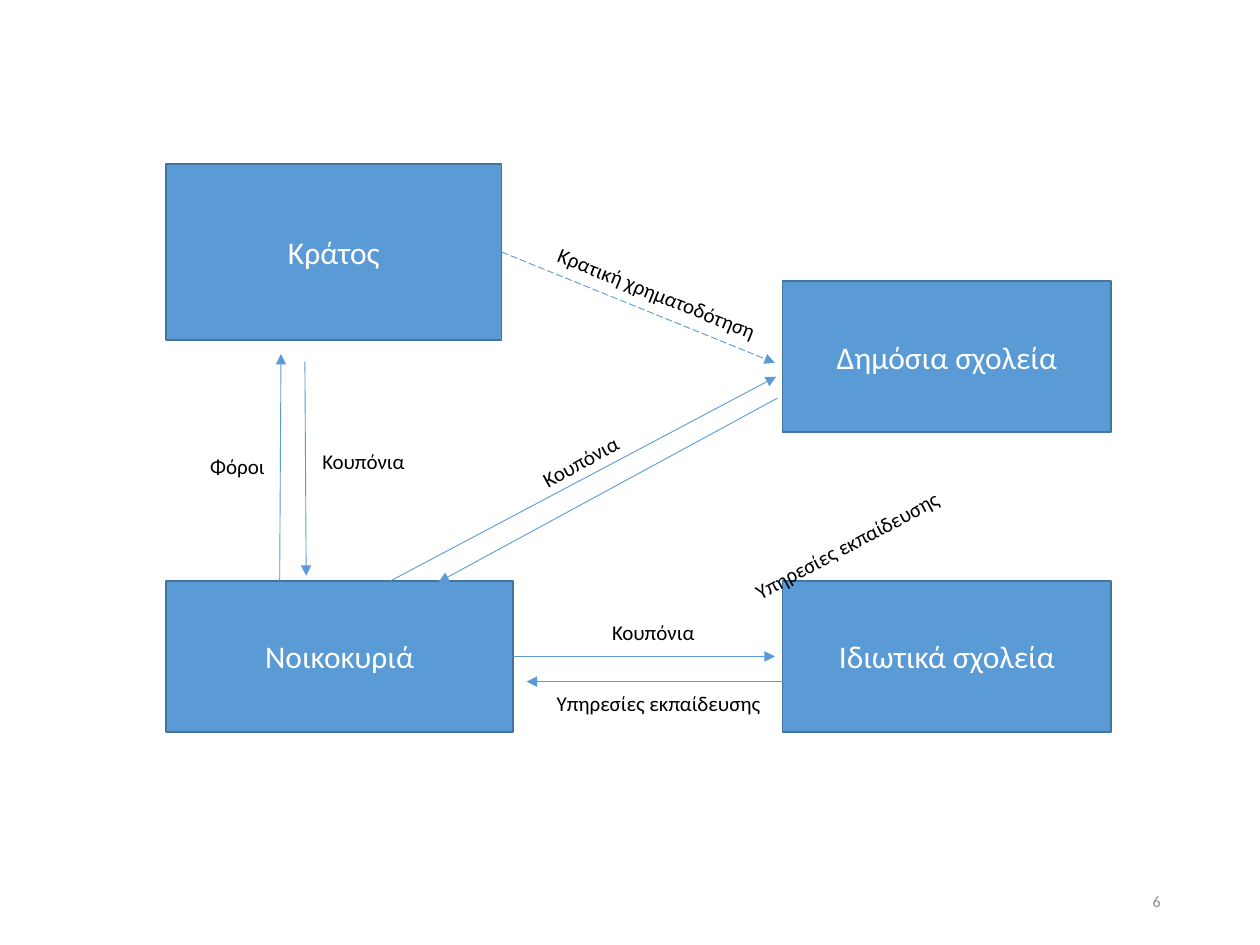
from lxml import etree
from pptx import Presentation
from pptx.dml.color import RGBColor
from pptx.enum.dml import MSO_LINE
from pptx.enum.shapes import MSO_CONNECTOR, MSO_SHAPE
from pptx.enum.text import MSO_ANCHOR, MSO_AUTO_SIZE, PP_ALIGN
from pptx.oxml.ns import qn
from pptx.util import Inches, Pt

STRAIGHT = MSO_CONNECTOR.STRAIGHT
RECTANGLE = MSO_SHAPE.RECTANGLE
LONG_DASH = MSO_LINE.LONG_DASH
MIDDLE = MSO_ANCHOR.MIDDLE
FIT_SHAPE = MSO_AUTO_SIZE.SHAPE_TO_FIT_TEXT
LEFT, CENTER, RIGHT = PP_ALIGN.LEFT, PP_ALIGN.CENTER, PP_ALIGN.RIGHT
RIGHT_SIDE = 3
FONT = "Calibri"
COLORS = {
    "fill": "5B9BD5",
    "outline": "43739E",
    "white": "FFFFFF",
    "black": "000000",
    "gray": "8C8C8C",
}

ACTORS = {
    "Νοικοκυριά": (1.32, 4.61, 2.75, 1.2),
    "Κράτος": (1.32, 1.3, 2.66, 1.4),
    "Δημόσια σχολεία": (6.21, 2.23, 2.61, 1.2),
    "Ιδιωτικά σχολεία": (6.21, 4.61, 2.61, 1.2),
}
FLOWS = [
    ((2.22, 4.61), (2.23, 2.81)),
    ((6.48, 5.41), (4.18, 5.41)),
    ((2.42, 2.87), (2.43, 4.57)),
    ((6.17, 3.16), (3.48, 4.62)),
    ((3.1, 4.61), (6.16, 2.99)),
]
LABELS = [
    ("Φόροι", (1.57, 3.55, 0.64, 0.3), 0),
    ("Κρατική χρηματοδότηση", (4.28, 2.18, 1.89, 0.3), 21.8),
    ("Υπηρεσίες εκπαίδευσης", (5.81, 4.17, 1.84, 0.3), 331.9),
    ("Υπηρεσίες εκπαίδευσης", (4.32, 5.43, 1.84, 0.3), 0),
    ("Κουπόνια", (4.76, 4.87, 0.86, 0.3), 0),
    ("Κουπόνια", (2.46, 3.51, 0.9, 0.3), 0),
    ("Κουπόνια", (4.18, 3.51, 0.86, 0.3), 331.1),
]


def color(name):
    """Return the named colour."""
    return RGBColor.from_string(COLORS[name])


def write(shape, text, size, color_name, align):
    """Put one formatted paragraph into a shape."""
    para = shape.text_frame.paragraphs[0]
    para.text = text
    para.alignment = align
    para.font.name = FONT
    para.font.size = Pt(size)
    para.font.color.rgb = color(color_name)


def add_actor(page, text, box):
    """Add a filled rectangle for one actor."""
    actor = page.shapes.add_shape(RECTANGLE, *map(Inches, box))
    actor.shadow.inherit = False
    actor.fill.solid()
    actor.fill.fore_color.rgb = color("fill")
    actor.line.color.rgb = color("outline")
    actor.line.width = Pt(1)
    actor.text_frame.word_wrap = True
    actor.text_frame.vertical_anchor = MIDDLE
    write(actor, text, 18, "white", CENTER)
    return actor


def add_flow(page, start, end):
    """Add a thin arrow between two points."""
    flow = page.shapes.add_connector(STRAIGHT, *map(Inches, start + end))
    flow.line.color.rgb = color("fill")
    flow.line.width = Pt(0.5)
    outline = flow._element.spPr.find(qn("a:ln"))
    etree.SubElement(outline, qn("a:tailEnd"), type="triangle")
    etree.SubElement(flow._element.spPr, qn("a:effectLst"))
    return flow


def add_label(page, text, box, angle):
    """Add a one-line flow label turned by an angle."""
    label = page.shapes.add_textbox(*map(Inches, box))
    label.rotation = angle
    label.text_frame.word_wrap = False
    label.text_frame.auto_size = FIT_SHAPE
    write(label, text, 12, "black", LEFT)


def add_page_number(page, text, box):
    """Add the page number at the right of its box."""
    number = page.shapes.add_textbox(*map(Inches, box))
    number.text_frame.word_wrap = True
    number.text_frame.vertical_anchor = MIDDLE
    write(number, text, 9, "gray", RIGHT)


def add_diagram(page):
    """Add the actors, the flows between them and the flow labels."""
    actors = {name: add_actor(page, name, box) for name, box in ACTORS.items()}
    for start, end in FLOWS:
        add_flow(page, start, end)
    funding = add_flow(page, (3.98, 2), (6.15, 2.88))
    funding.line.dash_style = LONG_DASH
    funding.begin_connect(actors["Κράτος"], RIGHT_SIDE)
    coupons = add_flow(page, (4.07, 5.21), (6.15, 5.21))
    coupons.begin_connect(actors["Νοικοκυριά"], RIGHT_SIDE)
    for text, box, angle in LABELS:
        add_label(page, text, box, angle)


def main():
    """Build and save the deck."""
    deck = Presentation()
    deck.slide_width, deck.slide_height = Inches(10), Inches(7.5)
    page = deck.slides.add_slide(deck.slide_layouts[6])
    add_page_number(page, "6", (7.06, 6.95, 2.25, 0.4))
    add_diagram(page)
    deck.save("out.pptx")


if __name__ == "__main__":
    main()
